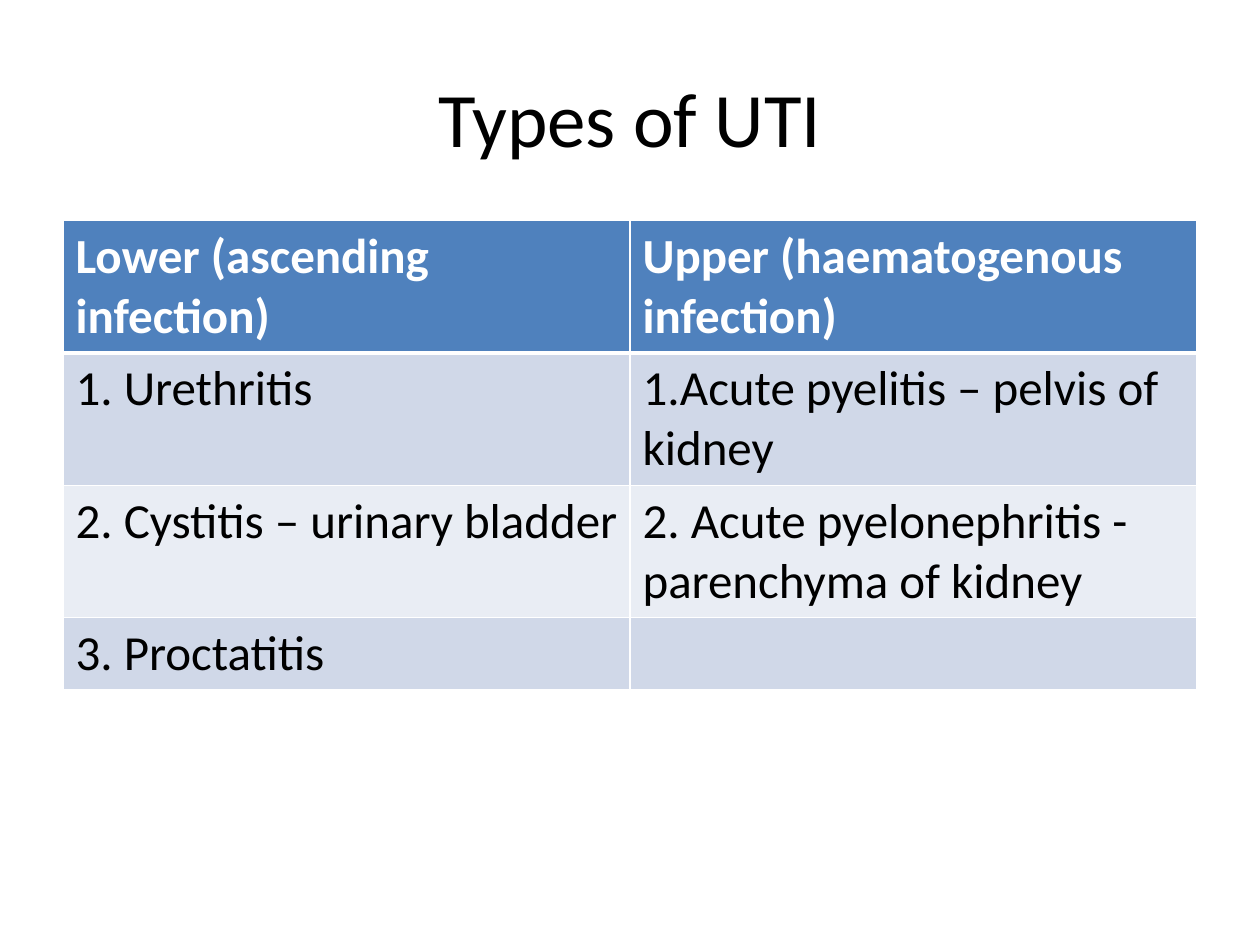
from lxml import etree
from pptx import Presentation
from pptx.dml.color import RGBColor
from pptx.enum import text
from pptx.oxml.ns import qn
from pptx.util import Inches, Pt

# Content
TITLE = "Types of UTI"
UTI_TYPES = [
    ("Lower (ascending infection)", "Upper (haematogenous infection)"),
    ("1. Urethritis", "1.Acute pyelitis – pelvis of kidney"),
    ("2. Cystitis – urinary bladder", "2. Acute pyelonephritis - parenchyma of kidney"),
    ("3. Proctatitis", ""),
]

# Layout and colours
LEFT, TABLE_TOP, WIDTH = 0.5, 1.75, 9
ROW_HEIGHTS = [1.04, 1.04, 1.04, 0.55]
BLACK, WHITE, HEADER = "000000", "FFFFFF", "4F81BD"
BANDS = ["D0D8E8", "E9EDF4"]


def rgb(colour):
    return RGBColor.from_string(colour)


def style_font(paragraph, size, colour, bold=False):
    font = paragraph.font
    font.name, font.size, font.bold = "Calibri", Pt(size), bold
    font.color.rgb = rgb(colour)


def set_borders(cell, widths):
    """Add white borders ahead of the cell's fill."""
    properties = cell._tc.get_or_add_tcPr()
    for position, (side, width) in enumerate(widths.items()):
        border = etree.Element(qn(f"a:ln{side}"), w=str(Pt(width)))
        fill = etree.SubElement(border, qn("a:solidFill"))
        etree.SubElement(fill, qn("a:srgbClr"), val=WHITE)
        properties.insert(position, border)


prs = Presentation()
prs.slide_width, prs.slide_height = Inches(10), Inches(7.5)
slide = prs.slides.add_slide(prs.slide_layouts[5])

# Title
title = slide.shapes.title
title.left, title.top = Inches(LEFT), Inches(0.3)
title.width, title.height = Inches(WIDTH), Inches(1.25)
title.text_frame.text = TITLE
title.text_frame.vertical_anchor = text.MSO_ANCHOR.MIDDLE
heading = title.text_frame.paragraphs[0]
heading.alignment = text.PP_ALIGN.CENTER
style_font(heading, 44, BLACK)

# Table of infection types
types_table = slide.shapes.add_table(
    len(UTI_TYPES), len(UTI_TYPES[0]), Inches(LEFT), Inches(TABLE_TOP),
    Inches(WIDTH), Inches(sum(ROW_HEIGHTS))).table

for r, (entries, height) in enumerate(zip(UTI_TYPES, ROW_HEIGHTS)):
    types_table.rows[r].height = Inches(height)
    is_header = r == 0
    for c, entry in enumerate(entries):
        cell = types_table.cell(r, c)
        cell.text = entry
        style_font(cell.text_frame.paragraphs[0], 28,
                   WHITE if is_header else BLACK, is_header)
        cell.fill.solid()
        cell.fill.fore_color.rgb = rgb(HEADER if is_header else BANDS[(r - 1) % 2])
        set_borders(cell, {"L": 1, "R": 1, "T": 3 if r == 1 else 1,
                           "B": 3 if is_header else 1})

prs.save("out.pptx")
